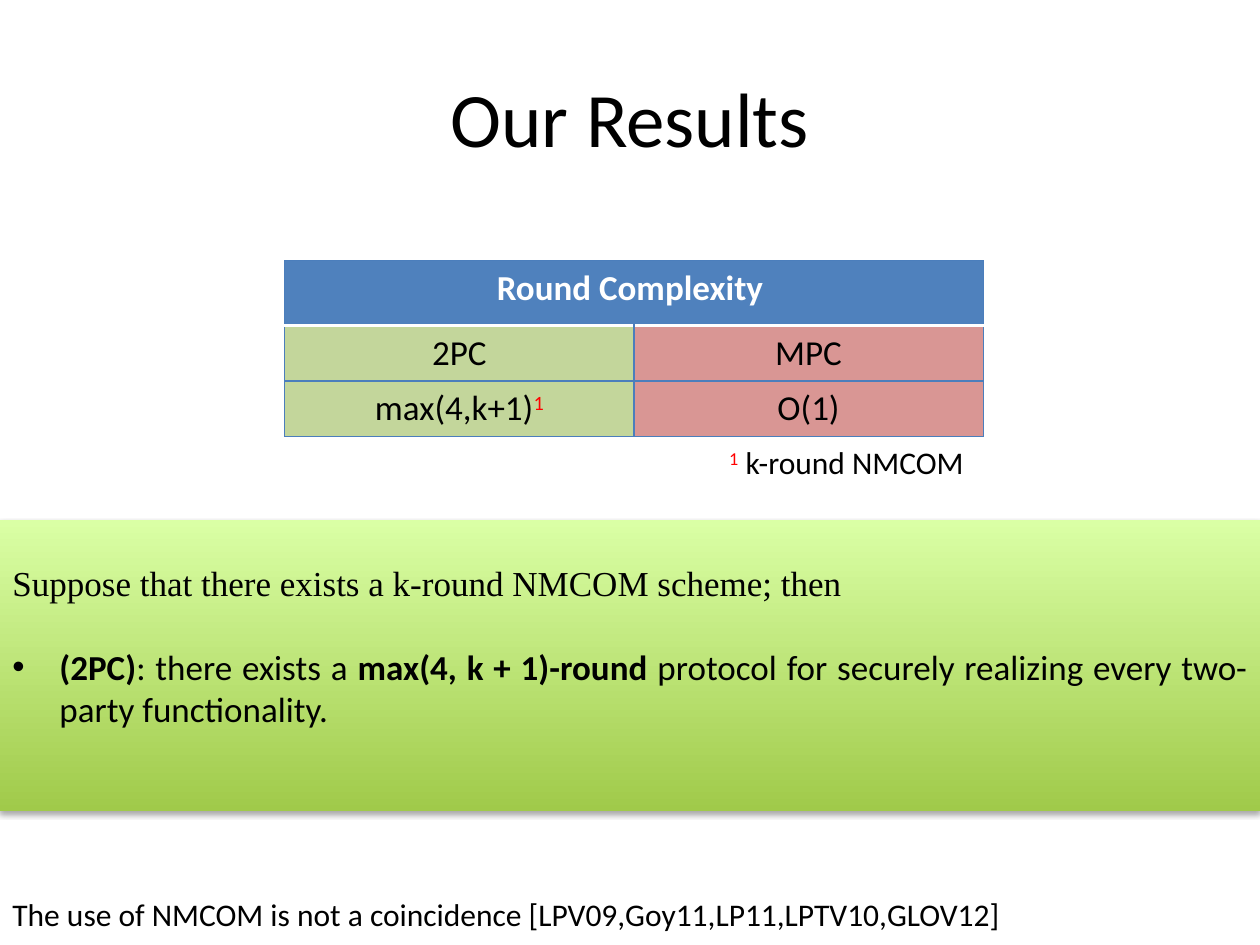
from lxml import etree
from pptx import Presentation
from pptx.dml.color import RGBColor
from pptx.enum.shapes import MSO_SHAPE as Shape
from pptx.enum.text import MSO_ANCHOR as Anchor, MSO_AUTO_SIZE as AutoSize, PP_ALIGN as Align
from pptx.oxml import parse_xml
from pptx.oxml.ns import nsdecls, qn
from pptx.util import Cm, Pt

COLORS = {
    "black": "000000",
    "white": "FFFFFF",
    "red": "FF0000",
    "header": "4F81BD",
    "border": "4B7EBC",
    "two_party": "C3D69B",
    "multi_party": "D99694",
    "panel_bottom": "A0CA4A",
    "panel_top": "DAFFA5",
}


def rgb(name):
    return RGBColor.from_string(COLORS[name])


def add_run(p, text, size, color="black", bold=False, font="Calibri", raised=False):
    r = p.add_run()
    r.text = text
    r.font.size, r.font.name, r.font.bold = Pt(size), font, bold
    r.font.color.rgb = rgb(color)
    if raised:
        r.font._element.set("baseline", "30000")


def add_text(s, left, top, width, height):
    tf = s.shapes.add_textbox(Cm(left), Cm(top), Cm(width), Cm(height)).text_frame
    tf.word_wrap = False
    tf.auto_size = AutoSize.SHAPE_TO_FIT_TEXT
    return tf.paragraphs[0]


def add_title(s, text):
    tf = s.shapes.add_textbox(Cm(1.27), Cm(0.76), Cm(22.86), Cm(3.18)).text_frame
    tf.word_wrap = True
    tf.vertical_anchor = Anchor.MIDDLE
    p = tf.paragraphs[0]
    p.alignment = Align.CENTER
    add_run(p, text, 44)


def set_border(cell, side, color, width):
    tc_pr = cell._tc.get_or_add_tcPr()
    line = parse_xml(
        f'<a:{side} {nsdecls("a")} w="{Pt(width)}"><a:solidFill>'
        f'<a:srgbClr val="{COLORS[color]}"/></a:solidFill></a:{side}>')
    # Borders come before the fill
    fill = tc_pr.find(qn("a:solidFill"))
    fill.addprevious(line)


def fill_cell(cell, text, fill, color="black", bold=False, note="", edges=None):
    cell.fill.solid()
    cell.fill.fore_color.rgb = rgb(fill)
    for side in ("lnL", "lnR", "lnT", "lnB"):
        set_border(cell, side, *(edges or {}).get(side, ("border", 0.75)))
    p = cell.text_frame.paragraphs[0]
    p.alignment = Align.CENTER
    add_run(p, text, 20, color, bold)
    if note:
        add_run(p, note, 20, "red", raised=True)


def add_results_table(s):
    table = s.shapes.add_table(3, 2, Cm(5.74), Cm(5.26), Cm(14.08), Cm(3.54)).table
    table.horz_banding = False
    for row, height in zip(table.rows, (1.3, 1.12, 1.12)):
        row.height = Cm(height)

    rule = ("white", 2)
    table.cell(0, 0).merge(table.cell(0, 1))
    fill_cell(table.cell(0, 0), "Round Complexity ", "header", "white", True,
              edges={"lnB": rule})
    columns = [
        ("two_party", [("2PC", ""), ("max(4,k+1)", "1")]),
        ("multi_party", [("MPC", ""), ("O(1)", "")]),
    ]
    for c, (fill, entries) in enumerate(columns):
        for i, (text, note) in enumerate(entries, start=1):
            edges = {"lnT": rule} if i == 1 else None
            fill_cell(table.cell(i, c), text, fill, note=note, edges=edges)


def add_bullet(p, indent):
    p_pr = p._p.get_or_add_pPr()
    p_pr.set("marL", str(indent))
    p_pr.set("indent", str(-indent))
    etree.SubElement(p_pr, qn("a:buFont")).set("typeface", "Arial")
    etree.SubElement(p_pr, qn("a:buChar")).set("char", "•")


def add_shadow(sp):
    sp.shadow.inherit = False
    effects = sp._element.spPr.find(qn("a:effectLst"))
    effects.append(parse_xml(
        f'<a:outerShdw {nsdecls("a")} blurRad="{Pt(3.1)}" dist="{Pt(1.8)}" dir="5400000" '
        'rotWithShape="0"><a:srgbClr val="000000"><a:alpha val="35000"/></a:srgbClr>'
        '</a:outerShdw>'))


def add_theorem(s):
    sp = s.shapes.add_shape(Shape.RECTANGLE, Cm(0), Cm(10.49), Cm(25.4), Cm(5.87))
    sp.line.fill.background()
    sp.fill.gradient()
    sp.fill.gradient_angle = 90
    for stop, name in zip(sp.fill.gradient_stops, ("panel_bottom", "panel_top")):
        stop.color.rgb = rgb(name)
    add_shadow(sp)

    tf = sp.text_frame
    tf.word_wrap = True
    tf.vertical_anchor = Anchor.TOP
    tf.margin_top = Cm(0.82)
    p = tf.paragraphs[0]
    p.alignment = Align.JUSTIFY
    p.space_after = Pt(24)
    add_run(p, "Suppose that there exists a k-round NMCOM scheme; then ", 20,
            font="Times New Roman")

    p = tf.add_paragraph()
    p.alignment = Align.JUSTIFY
    add_bullet(p, Cm(0.95))
    for text, bold in [
        ("(2PC)", True),
        (": there exists a ", False),
        ("max(4, k + 1)-round", True),
        (" protocol for securely realizing every two-party functionality. ", False),
    ]:
        add_run(p, text, 20, bold=bold)


def main():
    prs = Presentation()
    prs.slide_width, prs.slide_height = Cm(25.4), Cm(19.05)
    s = prs.slides.add_slide(prs.slide_layouts[6])

    add_title(s, "Our Results")
    add_theorem(s)

    # Footnote of the table
    p = add_text(s, 14.45, 8.81, 5.36, 1.02)
    add_run(p, "1", 18, "red", raised=True)
    add_run(p, " k-round NMCOM", 18)

    add_results_table(s)

    # Closing remark
    p = add_text(s, 0, 17.91, 20.5, 1.02)
    add_run(p, "The use of NMCOM is not a coincidence [LPV09,Goy11,LP11,LPTV10,GLOV12]", 18)

    prs.save("out.pptx")


if __name__ == "__main__":
    main()
